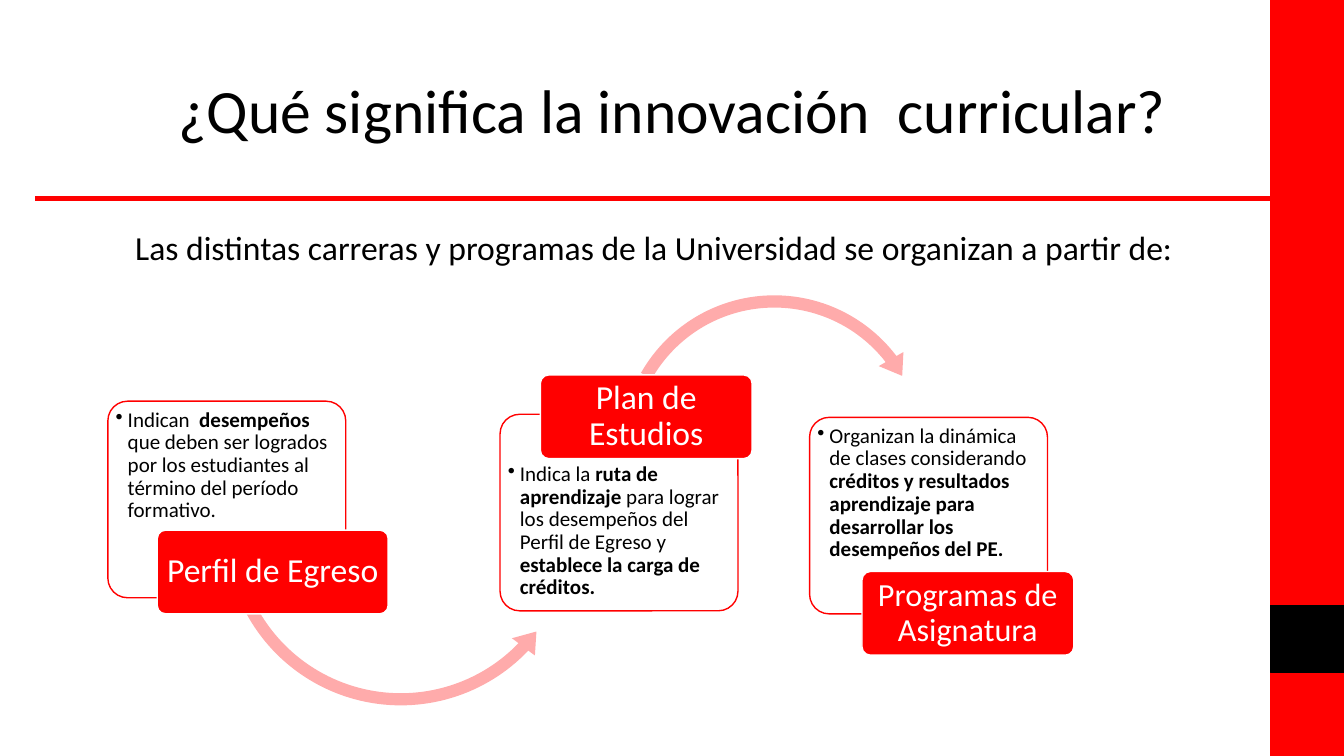
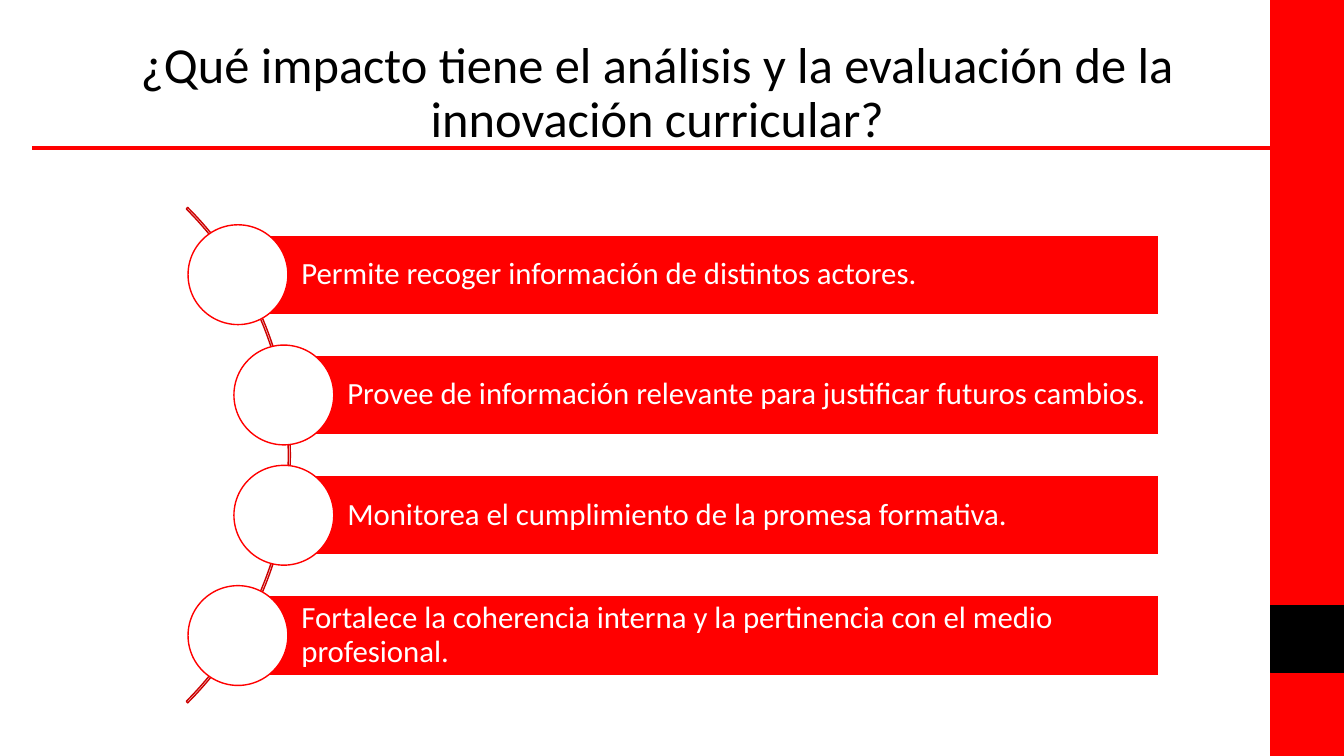
from lxml.etree import SubElement
from pptx import Presentation
from pptx.dml.color import RGBColor
from pptx.enum.shapes import MSO_CONNECTOR, MSO_SHAPE
from pptx.enum.text import MSO_ANCHOR, PP_ALIGN
from pptx.oxml.ns import qn
from pptx.util import Inches, Pt

RED = RGBColor(0xFF, 0x00, 0x00)
DARK_RED = RGBColor(0xCC, 0x00, 0x00)
PINK = RGBColor(0xFF, 0xAB, 0xAB)
BLACK = RGBColor(0x00, 0x00, 0x00)
WHITE = RGBColor(0xFF, 0xFF, 0xFF)
FONT = "Calibri"
SLIDE_WIDTH, SLIDE_HEIGHT = 13.33, 7.5
BAND_LEFT, BAND_WIDTH = 12.6, 0.73
CARD_WIDTH, CARD_HEIGHT = 2.36, 1.95
LABEL_HEIGHT = 0.83

STEPS = [
    {
        "card": (1.07, 3.98),
        "text_top": 0.02,
        "runs": [
            ("Indican  ", False),
            ("desempeños ", True),
            ("que deben ser logrados por los estudiantes al término del período formativo.", False),
        ],
        "arrow": (MSO_SHAPE.LEFT_CIRCULAR_ARROW, (2.15, 3.43, 3.65),
                  (0.033, 4.082, 26.225, 94.633, 0.039)),
        "label": ("Perfil de Egreso", 0.49, 1.28, 2.29, 24),
    },
    {
        "card": (4.96, 4.11),
        "text_top": 0.43,
        "runs": [
            ("Indica la ", False),
            ("ruta de aprendizaje ", True),
            ("para lograr los desempeños del Perfil de Egreso y ", False),
            ("establece la carga de créditos.", True),
        ],
        "arrow": (MSO_SHAPE.CIRCULAR_ARROW, (6.08, 2.85, 3.2),
                  (0.038, 4.712, 193.533, 125.755, 0.044)),
        "label": ("Plan de Estudios", 0.4, -0.39, 2.1, 24),
    },
    {
        "card": (8.03, 4.14),
        "text_top": 0.02,
        "runs": [
            ("Organizan la dinámica de clases considerando ", False),
            ("créditos y resultados aprendizaje para desarrollar los desempeños del PE.", True),
        ],
        "arrow": None,
        "label": ("Programas de Asignatura", 0.52, 1.53, 2.1, 23),
    },
]

IMPACTS = [
    ("Permite recoger información de distintos actores.", 0),
    ("Provee de información relevante para justificar futuros cambios.", 0.455),
    ("Monitorea el cumplimiento de la promesa formativa.", 0.455),
    ("Fortalece la coherencia interna y la pertinencia con el medio profesional.", 0),
]


def add_shape(slide, kind, box, fill=None, line=None, adjustments=()):
    shape = slide.shapes.add_shape(kind, *map(Inches, box))
    shape.shadow.inherit = False
    for index, value in enumerate(adjustments):
        shape.adjustments[index] = value
    if fill is None:
        shape.fill.background()
    else:
        shape.fill.solid()
        shape.fill.fore_color.rgb = fill
    if line is None:
        shape.line.fill.background()
    else:
        shape.line.color.rgb = line
        shape.line.width = Pt(1)
    return shape


def set_frame(frame, anchor, left, top, right, bottom):
    frame.word_wrap = True
    frame.vertical_anchor = anchor
    frame.margin_left, frame.margin_top = Inches(left), Inches(top)
    frame.margin_right, frame.margin_bottom = Inches(right), Inches(bottom)


def style_paragraph(paragraph, size, color, align=PP_ALIGN.LEFT, spacing=0.9):
    paragraph.alignment = align
    paragraph.line_spacing = spacing
    paragraph.font.name = FONT
    paragraph.font.size = Pt(size)
    paragraph.font.color.rgb = color


def add_bullet(paragraph, indent):
    properties = paragraph._p.get_or_add_pPr()
    properties.set("marL", str(Inches(indent)))
    properties.set("indent", str(-Inches(indent)))
    SubElement(properties, qn("a:buChar")).set("char", "•")


def add_titled_slide(presentation, text, box, size, rule_left, rule_top):
    slide = presentation.slides.add_slide(presentation.slide_layouts[5])
    title = slide.shapes.title
    title.left, title.top, title.width, title.height = map(Inches, box)
    set_frame(title.text_frame, MSO_ANCHOR.MIDDLE, 0.1, 0.05, 0.1, 0.05)
    title.text_frame.text = text
    style_paragraph(title.text_frame.paragraphs[0], size, BLACK, PP_ALIGN.CENTER)

    add_shape(slide, MSO_SHAPE.RECTANGLE, (BAND_LEFT, 0, BAND_WIDTH, SLIDE_HEIGHT), RED, RED)
    add_shape(slide, MSO_SHAPE.RECTANGLE, (BAND_LEFT, 6.01, BAND_WIDTH, 0.66), BLACK, BLACK)
    rule = slide.shapes.add_connector(
        MSO_CONNECTOR.STRAIGHT, Inches(rule_left), Inches(rule_top),
        Inches(BAND_LEFT), Inches(rule_top))
    rule.line.color.rgb = RED
    rule.line.width = Pt(3)
    SubElement(rule._element.spPr, qn("a:effectLst"))
    return slide


def add_step(slide, step):
    left, top = step["card"]
    card = add_shape(slide, MSO_SHAPE.ROUNDED_RECTANGLE,
                     (left, top, CARD_WIDTH, CARD_HEIGHT), WHITE, RED, (0.1,))
    set_frame(card.text_frame, MSO_ANCHOR.TOP, 0.02, step["text_top"], 0.02, 0.02)
    paragraph = card.text_frame.paragraphs[0]
    add_bullet(paragraph, 0.12)
    style_paragraph(paragraph, 15, BLACK)
    for text, bold in step["runs"]:
        run = paragraph.add_run()
        run.text = text
        run.font.bold = bold

    if step["arrow"]:
        kind, (arrow_left, arrow_top, side), adjustments = step["arrow"]
        add_shape(slide, kind, (arrow_left, arrow_top, side, side), PINK, None, adjustments)

    text, offset_x, offset_y, width, size = step["label"]
    label = add_shape(slide, MSO_SHAPE.ROUNDED_RECTANGLE,
                      (left + offset_x, top + offset_y, width, LABEL_HEIGHT),
                      RED, WHITE, (0.1,))
    set_frame(label.text_frame, MSO_ANCHOR.MIDDLE, 0.05, 0.03, 0.05, 0.03)
    label.text_frame.text = text
    style_paragraph(label.text_frame.paragraphs[0], size, WHITE, PP_ALIGN.CENTER)


def add_impact_list(slide, left, top, width, height):
    bar_height, circle_size = 0.79, 0.99
    pitch = (height - bar_height) / (len(IMPACTS) - 1)
    arc_size = 6.95
    add_shape(slide, MSO_SHAPE.BLOCK_ARC,
              (left + 0.52 - arc_size, top + (height - arc_size) / 2, arc_size, arc_size),
              None, DARK_RED, (189, 27, 0.003))
    for index, (text, shift) in enumerate(IMPACTS):
        bar_left, bar_top = left + shift, top + index * pitch
        bar = add_shape(slide, MSO_SHAPE.RECTANGLE,
                        (bar_left, bar_top, width - shift, bar_height), RED, WHITE)
        set_frame(bar.text_frame, MSO_ANCHOR.MIDDLE, 0.63, 0.06, 0.06, 0.06)
        bar.text_frame.text = text
        style_paragraph(bar.text_frame.paragraphs[0], 22, WHITE)
        add_shape(slide, MSO_SHAPE.OVAL,
                  (bar_left - circle_size / 2, bar_top + (bar_height - circle_size) / 2,
                   circle_size, circle_size), WHITE, RED)


def build_meaning_slide(presentation):
    slide = add_titled_slide(presentation, "¿Qué significa la innovación  curricular?",
                             (0.92, 0.4, 11.5, 1.45), 44, 0.35, 1.97)
    for step in STEPS:
        add_step(slide, step)
    introduction = slide.shapes.add_textbox(*map(Inches, (0.92, 2.2, 11.13, 0.5)))
    introduction.text_frame.word_wrap = True
    introduction.text_frame.text = (
        "Las distintas carreras y programas de la Universidad se organizan a partir de:")
    style_paragraph(introduction.text_frame.paragraphs[0], 24, BLACK, PP_ALIGN.CENTER, 1.0)


def build_impact_slide(presentation):
    slide = add_titled_slide(
        presentation,
        "¿Qué impacto tiene el análisis y la evaluación de la innovación curricular?",
        (0.77, 0.4, 11.5, 1.07), 36, 0.32, 1.47)
    add_impact_list(slide, 2.36, 2.33, 9.13, 4.37)


def main():
    presentation = Presentation()
    presentation.slide_width = Inches(SLIDE_WIDTH)
    presentation.slide_height = Inches(SLIDE_HEIGHT)
    build_meaning_slide(presentation)
    build_impact_slide(presentation)
    presentation.save("out.pptx")


if __name__ == "__main__":
    main()
